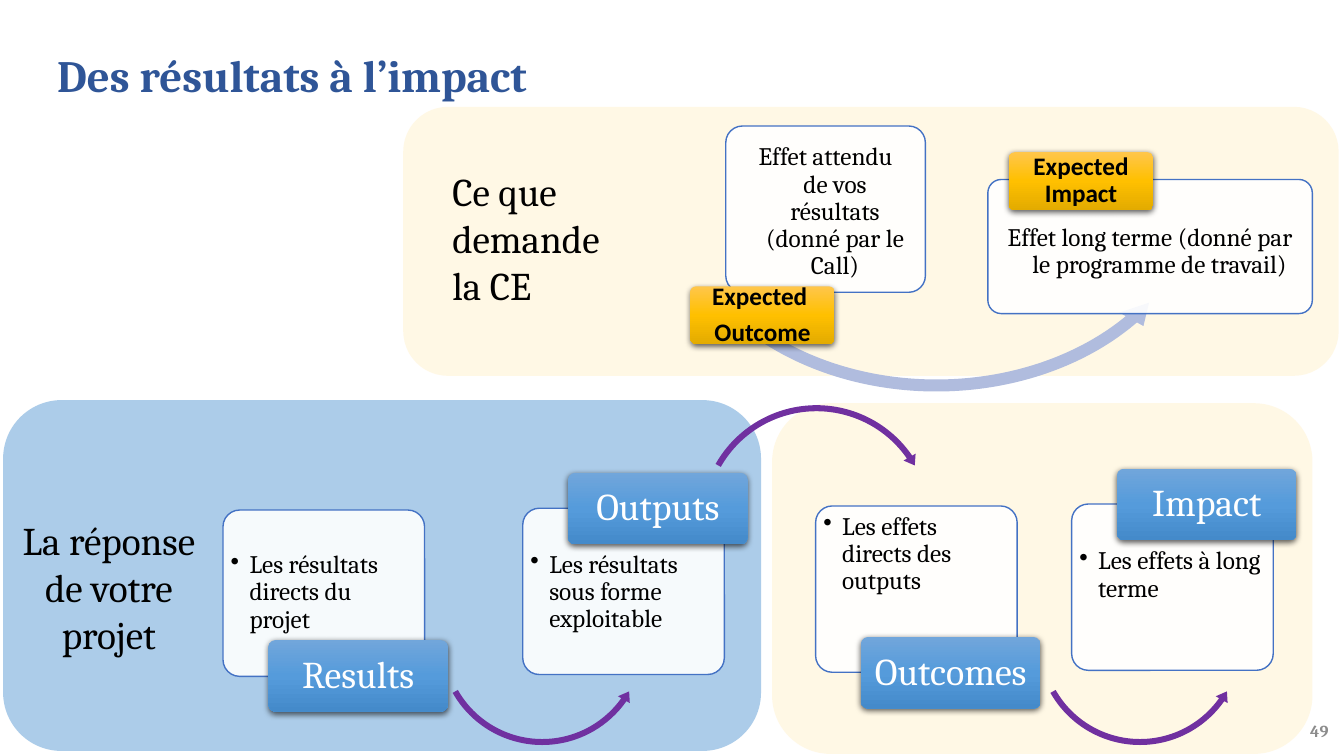
from lxml import etree
from pptx import Presentation
from pptx.dml.color import RGBColor
from pptx.enum import shapes, text
from pptx.oxml import ns
from pptx.util import Pt

SHAPE = shapes.MSO_SHAPE
ALIGN = text.PP_ALIGN
ANCHOR = text.MSO_ANCHOR

BLACK, WHITE, PURPLE = "000000", "FFFFFF", "7030A0"
YELLOW = ["FFC64B", "FFC000", "E3AB00"]
BLUE = ["71A6DB", "559BDB", "448ACA"]

# Boxes are (left, top, width, height) in points.
PANELS = [
    ((551.5, 288, 386, 250.5), "FFF2CC"),
    ((288, 76.3, 668.2, 192.2), "FFF2CC"),
    ((2.2, 285.8, 541.4, 250.6), "5B9BD5"),
]
# box, text, size, colour, bold, alignment, anchor
LABELS = [
    ((33.8, 26, 883, 54), "Des résultats à l’impact", 32, "2F5597", True, ALIGN.LEFT, ANCHOR.MIDDLE),
    ((740, 507.6, 216, 28.8), "49", 12, "8C8C8C", True, ALIGN.RIGHT, ANCHOR.MIDDLE),
    ((316, 116, 132.5, 108.7), "Ce que demande la CE", 28, BLACK, False, ALIGN.LEFT, ANCHOR.TOP),
    ((0.7, 365, 154, 108.7), "La réponse de votre projet", 28, BLACK, False, ALIGN.CENTER, ANCHOR.TOP),
]
# card box, top inset, card text, tag left and top, tag lines
EXPECTED = [
    ((518.4, 90, 142.6, 118.8), 9.5, "Effet attendu de vos résultats (donné par le Call)",
     (493.2, 204.5), ["Expected ", "Outcome"]),
    ((705.6, 128.2, 231.8, 95.8), 29.5, "Effet long terme (donné par le programme de travail)",
     (720.7, 108.7), ["Expected Impact"]),
]
# card left and top, top inset, card text, tag top, tag text
ANSWERS = [
    ((159.3, 364.3), 26.5, "Les résultats directs du projet", 457.2, "Results"),
    ((373.4, 363), 27.5, "Les résultats sous forme exploitable", 337.7, "Outputs"),
    ((582.6, 361.4), 2, "Les effets directs des outputs", 455, "Outcomes"),
    ((765.5, 360), 28, "Les effets à long terme", 334.8, "Impact"),
]
CARD_SIZE = (144, 118.8)
EXPECTED_TAG_SIZE = (103, 41.2)
ANSWER_TAG_SIZE = (128.2, 51.2)
TAG_SHIFT = 32.4
HANGING = 13.5

LOWER_ARC = [0.028, 3.364, 21.119, 90.245, 0.032]
EXPECTED_ARROW = ((470.9, -23, 396, 308.2), SHAPE.LEFT_CIRCULAR_ARROW,
                  [0.028, 3.356, 20.907, 90.041, 0.032], "B0BCDE")
ANSWER_ARROWS = [
    ((311, 382.3, 152.6, 152.6), SHAPE.LEFT_CIRCULAR_ARROW, LOWER_ARC, PURPLE),
    ((497.5, 286.6, 171.4, 171.4), SHAPE.CIRCULAR_ARROW,
     [0.025, 2.982, 195.263, 125.755, 0.029], PURPLE),
    ((738, 382.3, 152.6, 152.6), SHAPE.LEFT_CIRCULAR_ARROW, LOWER_ARC, PURPLE),
]

presentation = Presentation()
presentation.slide_width, presentation.slide_height = Pt(960), Pt(540)
slide = presentation.slides.add_slide(presentation.slide_layouts[6])


def color(value):
    return RGBColor.from_string(value)


def add_xml(parent, tag, **attributes):
    return etree.SubElement(parent, ns.qn(tag), attributes)


def add_shape(kind, box, fill=None, opacity=100, adjustments=()):
    """Add a preset shape without line or shadow."""
    shape = slide.shapes.add_shape(kind, *map(Pt, box))
    shape.shadow.inherit = False
    shape.line.fill.background()
    for index, value in enumerate(adjustments):
        shape.adjustments[index] = value
    if fill:
        shape.fill.solid()
        shape.fill.fore_color.rgb = color(fill)
    if opacity < 100:
        solid = shape.fill._xPr.find(ns.qn("a:solidFill"))
        add_xml(solid[0], "a:alpha", val=str(opacity * 1000))
    return shape


def write(shape, lines, size, font="Cambria", fill=BLACK, bold=False,
          align=ALIGN.LEFT, anchor=ANCHOR.TOP, insets=(7.2, 3.6, 7.2, 3.6), spacing=None):
    frame = shape.text_frame
    frame.word_wrap = True
    frame.vertical_anchor = anchor
    (frame.margin_left, frame.margin_top,
     frame.margin_right, frame.margin_bottom) = map(Pt, insets)
    frame.text = "\n".join(lines)
    for index, paragraph in enumerate(frame.paragraphs):
        paragraph.alignment = align
        paragraph.line_spacing = spacing
        if index:
            paragraph.space_before = Pt(6)
        paragraph.font.name = font
        paragraph.font.size = Pt(size)
        paragraph.font.bold = bold
        paragraph.font.color.rgb = color(fill)
    return frame.paragraphs[0]


def add_card(box, words, side, top, align, bullet=False):
    """Add a white outlined card whose text has a hanging indent."""
    card = add_shape(SHAPE.ROUNDED_RECTANGLE, box, WHITE, 90, [0.1])
    card.line.color.rgb = color("4472C4")
    card.line.width = Pt(1)
    paragraph = write(card, [words], 18, align=align, insets=(side, top, side, 0), spacing=0.9)
    properties = paragraph._p.get_or_add_pPr()
    properties.set("marL", str(Pt(HANGING)))
    properties.set("indent", str(-Pt(HANGING)))
    if bullet:
        mark = etree.Element(ns.qn("a:buChar"), char="•")
        properties.find(ns.qn("a:defRPr")).addprevious(mark)


def add_tag(box, lines, stops, **style):
    """Add a gradient tag with a soft shadow below it."""
    tag = add_shape(SHAPE.ROUNDED_RECTANGLE, box, adjustments=[0.1])
    tag.fill.gradient()
    tag.fill.gradient_angle = 270
    stop_list = tag._element.spPr.find(".//" + ns.qn("a:gsLst"))
    stop_list[:] = []
    for index, value in enumerate(stops):
        stop = add_xml(stop_list, "a:gs", pos=str(index * 50000))
        add_xml(stop, "a:srgbClr", val=value)
    effects = tag._element.spPr.find(ns.qn("a:effectLst"))
    shadow = add_xml(effects, "a:outerShdw", blurRad=str(Pt(4.5)), dist=str(Pt(1.5)),
                     dir="5400000", algn="ctr", rotWithShape="0")
    add_xml(add_xml(shadow, "a:srgbClr", val=BLACK), "a:alpha", val="63000")
    write(tag, lines, align=ALIGN.CENTER, anchor=ANCHOR.MIDDLE,
          insets=(3, 2, 3, 2), spacing=0.9, **style)


def add_arrow(box, kind, adjustments, fill):
    add_shape(kind, box, fill, adjustments=adjustments)


for box, fill in PANELS:
    add_shape(SHAPE.ROUNDED_RECTANGLE, box, fill, 50)

for box, words, size, fill, bold, align, anchor in LABELS:
    label = slide.shapes.add_textbox(*map(Pt, box))
    write(label, [words], size, fill=fill, bold=bold, align=align, anchor=anchor)

for index, (box, top, words, corner, lines) in enumerate(EXPECTED):
    add_card(box, words, 9.5, top, ALIGN.CENTER)
    if index == 0:
        add_arrow(*EXPECTED_ARROW)
    add_tag(corner + EXPECTED_TAG_SIZE, lines, YELLOW, size=18, font="Calibri", bold=True)

for (left, top), inset, words, tag_top, name in ANSWERS:
    add_card((left, top) + CARD_SIZE, words, 2, inset, ALIGN.LEFT, bullet=True)
    add_tag((left + TAG_SHIFT, tag_top) + ANSWER_TAG_SIZE, [name], BLUE, size=27, fill=WHITE)

for arrow in ANSWER_ARROWS:
    add_arrow(*arrow)

presentation.save("out.pptx")
